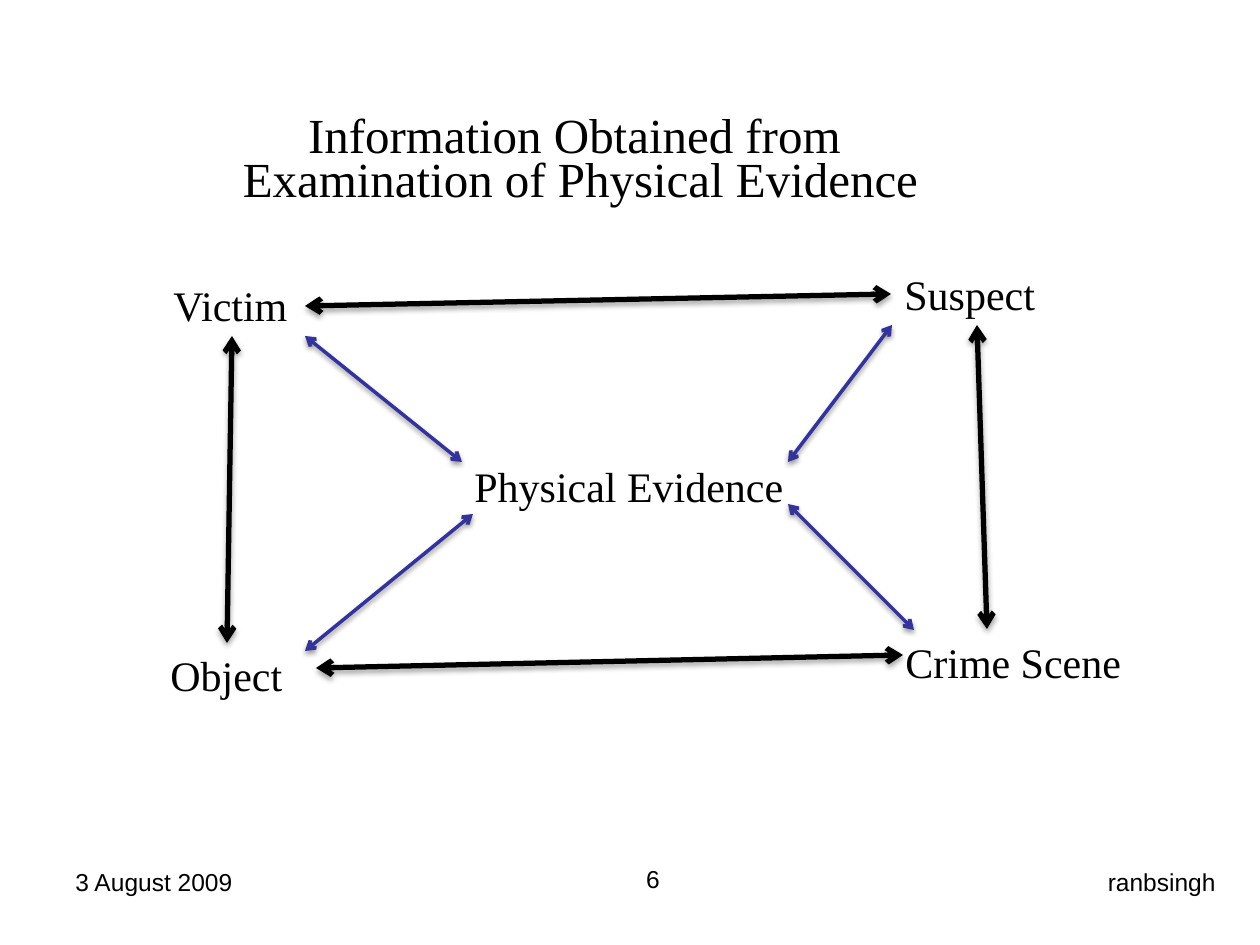
from lxml.etree import SubElement
from pptx import Presentation
from pptx.dml.color import RGBColor
from pptx.enum.shapes import MSO_CONNECTOR
from pptx.enum.text import MSO_ANCHOR, MSO_AUTO_SIZE, PP_ALIGN
from pptx.oxml.ns import qn
from pptx.util import Emu, Pt

EMU_PER_PX = 914400 / 126
BLACK = RGBColor(0x00, 0x00, 0x00)
INDIGO = RGBColor(0x33, 0x33, 0x99)
SERIF, SANS = "Times New Roman", "Arial"

TITLE_LINES = ("Information Obtained from ", "Examination of Physical Evidence")

# Label: left, top, width
LABELS = {
    "Victim": (161, 273, 140),
    "Suspect": (892, 262, 168),
    "Object": (158, 643, 139),
    "Crime Scene": (893, 630, 243),
    "Physical Evidence": (462, 454, 338),
}

# Arrows as x1, y1, x2, y2
OUTER_LINKS = (
    (316, 668, 903, 655),  # Object - Crime Scene
    (232, 336, 227, 643),  # Victim - Object
    (977, 325, 987, 629),  # Suspect - Crime Scene
    (305, 306, 891, 294),  # Victim - Suspect
)
EVIDENCE_LINKS = (
    (788, 504, 914, 630),  # to Crime Scene
    (892, 325, 788, 462),  # to Suspect
    (473, 514, 305, 651),  # to Object
    (305, 336, 462, 462),  # to Victim
)

# Text, left, top, width, alignment
FOOTERS = (
    ("3 August 2009", 63, 861, 294, PP_ALIGN.LEFT),
    ("6", 378, 858, 294, PP_ALIGN.RIGHT),
    ("ranbsingh", 829, 861, 399, PP_ALIGN.RIGHT),
)


def px(length):
    return Emu(round(length * EMU_PER_PX))


def write_run(paragraph, text, size, font_name, align):
    paragraph.alignment = align
    run = paragraph.add_run()
    run.text = text
    run.font.size = Pt(size)
    run.font.name = font_name
    run.font.color.rgb = BLACK


def add_title(slide):
    title = slide.shapes.title
    title.left, title.top, title.width, title.height = map(px, (227, 111, 707, 102))
    frame = title.text_frame
    frame.word_wrap = False
    frame.auto_size = MSO_AUTO_SIZE.SHAPE_TO_FIT_TEXT
    frame.vertical_anchor = MSO_ANCHOR.MIDDLE
    for index, line in enumerate(TITLE_LINES):
        paragraph = frame.add_paragraph() if index else frame.paragraphs[0]
        paragraph.line_spacing = 0.75
        paragraph.space_before = Pt(0)
        write_run(paragraph, line, 28, SERIF, PP_ALIGN.CENTER)


def add_label(slide, text, left, top, width):
    box = slide.shapes.add_textbox(px(left), px(top), px(width), px(64))
    box.text_frame.word_wrap = False
    box.text_frame.auto_size = MSO_AUTO_SIZE.SHAPE_TO_FIT_TEXT
    write_run(box.text_frame.paragraphs[0], text, 24, SERIF, PP_ALIGN.LEFT)


def add_footer(slide, text, left, top, width, align):
    box = slide.shapes.add_textbox(px(left), px(top), px(width), px(66))
    box.text_frame.word_wrap = True
    write_run(box.text_frame.paragraphs[0], text, 14, SANS, align)


def add_shadow(connector, distance, opacity):
    effects = SubElement(connector._element.spPr, qn("a:effectLst"))
    shadow = SubElement(effects, qn("a:outerShdw"), blurRad=str(Pt(3.1)),
                        dist=str(Pt(distance)), dir="5400000", rotWithShape="0")
    color = SubElement(shadow, qn("a:srgbClr"), val=str(BLACK))
    SubElement(color, qn("a:alpha"), val=str(opacity * 1000))


def add_double_arrow(slide, ends, color, weight, shadow_distance, shadow_opacity):
    arrow = slide.shapes.add_connector(MSO_CONNECTOR.STRAIGHT, *map(px, ends))
    arrow.line.color.rgb = color
    arrow.line.width = Pt(weight)
    outline = arrow.line._get_or_add_ln()
    for end in ("a:headEnd", "a:tailEnd"):
        SubElement(outline, qn(end), type="arrow")
    add_shadow(arrow, shadow_distance, shadow_opacity)


def main():
    deck = Presentation()
    deck.slide_width, deck.slide_height = px(1260), px(945)
    slide = deck.slides.add_slide(deck.slide_layouts.get_by_name("Title Only"))

    add_title(slide)

    # Linkage diagram
    for text, place in LABELS.items():
        add_label(slide, text, *place)
    for ends in OUTER_LINKS:
        add_double_arrow(slide, ends, BLACK, 3, 1.8, 35)
    for ends in EVIDENCE_LINKS:
        add_double_arrow(slide, ends, INDIGO, 2, 1.6, 38)

    # Date, page number and author
    for footer in FOOTERS:
        add_footer(slide, *footer)

    deck.save("out.pptx")


if __name__ == "__main__":
    main()
